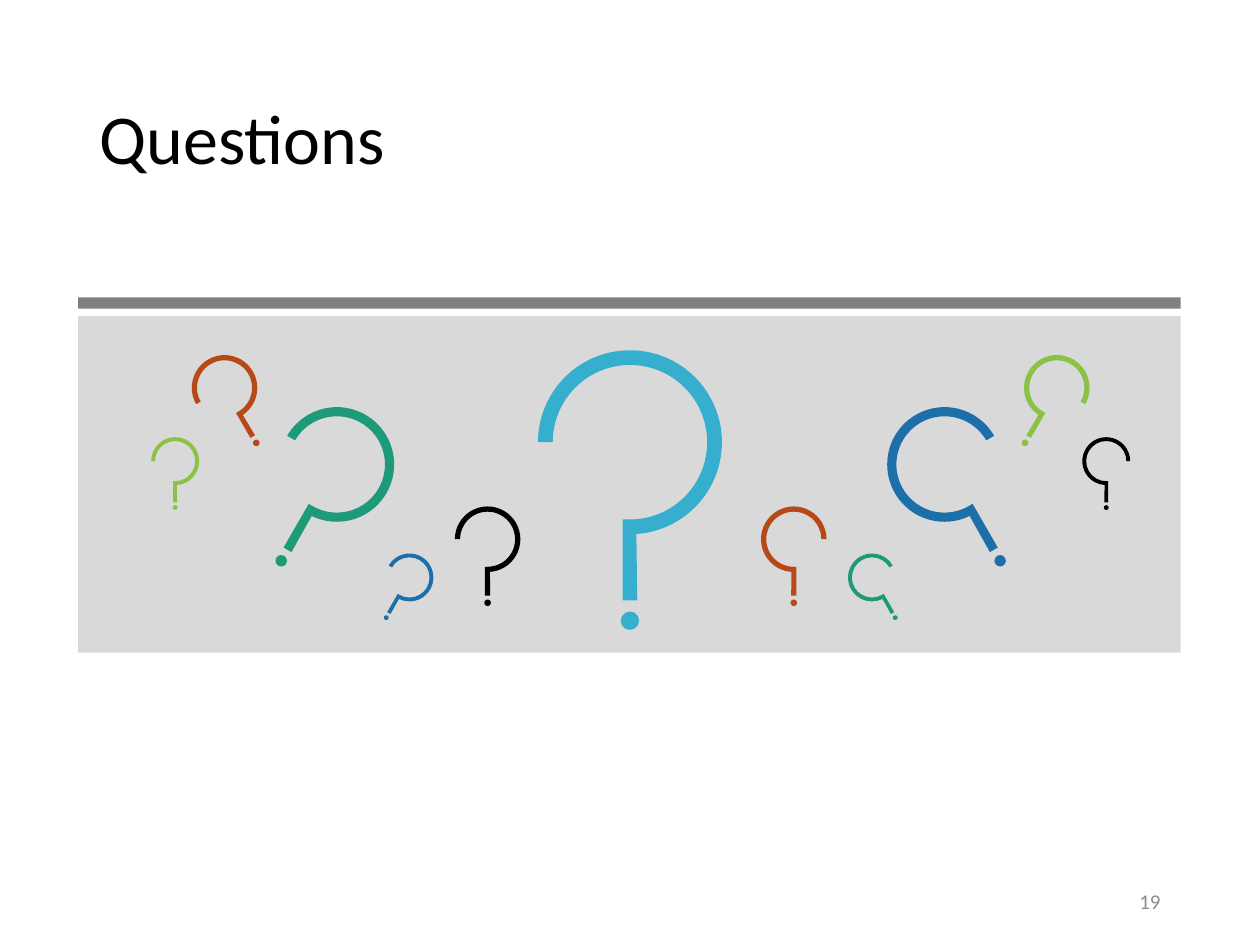
import math

import lxml.etree
import pptx
import pptx.dml.color
import pptx.enum.shapes
import pptx.enum.text
import pptx.oxml.ns
import pptx.util

Inches = pptx.util.Inches
RGBColor = pptx.dml.color.RGBColor
PP_ALIGN = pptx.enum.text.PP_ALIGN
qn = pptx.oxml.ns.qn

BLACK = RGBColor(0x00, 0x00, 0x00)
NUMBER_GRAY = RGBColor(0x8C, 0x8C, 0x8C)
PANEL_GRAY = RGBColor(0xD9, 0xD9, 0xD9)
BAR_GRAY = RGBColor(0x80, 0x80, 0x80)
CYAN = RGBColor(0x36, 0xAF, 0xCE)
RUST = RGBColor(0xB7, 0x49, 0x19)
TEAL = RGBColor(0x1D, 0x9A, 0x78)
LIME = RGBColor(0x8B, 0xC1, 0x45)
BLUE = RGBColor(0x1D, 0x6F, 0xA9)

FONT = "Calibri"
MIRROR_SUM = 10.17

# left, top, width, rotation, colour, colour of the mirrored twin
MARK_PAIRS = [
    (1.59, 2.80, 0.52, -30, RUST, LIME),
    (2.10, 3.20, 0.91, 30, TEAL, BLUE),
    (1.20, 3.47, 0.38, 0, LIME, BLACK),
    (3.61, 4.02, 0.52, 0, BLACK, RUST),
    (3.01, 4.38, 0.38, 30, BLUE, TEAL),
]


def arc(cy, radius, angles):
    segments = []
    for start, end in zip(angles, angles[1:]):
        a = math.radians(end)
        point = (0.5 + radius * math.cos(a), cy + radius * math.sin(a))
        segments.append((point, (radius, start, end - start)))
    return segments


def hook_segments():
    stem = [(0.54, 1.36), (0.46, 1.36), (0.46, 0.92), (0.5, 0.92)]
    return (
        arc(0.5, 0.5, [180, 270, 360, 446])
        + [(point, None) for point in stem]
        + arc(0.5, 0.42, [450, 360, 270, 180])
    )


def dot_segments():
    return arc(1.47, 0.05, [0, 90, 180, 270, 360])


def curve_segments(s, segments, width):
    lines = list(s._element.iter(qn("a:lnTo")))
    for line, (_, curve) in zip(lines, segments):
        if curve:
            radius, start, sweep = curve
            size = str(Inches(radius * width))
            bend = lxml.etree.SubElement(line.getparent(), qn("a:arcTo"))
            bend.set("wR", size)
            bend.set("hR", size)
            bend.set("stAng", str(start % 360 * 60000))
            bend.set("swAng", str(sweep * 60000))
            line.getparent().replace(line, bend)


def paint(s, color):
    s.shadow.inherit = False
    s.fill.solid()
    s.fill.fore_color.rgb = color
    s.line.fill.background()


def add_bar(shapes, left, top, width, height, color):
    s = shapes.add_shape(
        pptx.enum.shapes.MSO_SHAPE.RECTANGLE,
        Inches(left), Inches(top), Inches(width), Inches(height),
    )
    paint(s, color)


def add_mark(shapes, left, top, width, rotation, color, mirrored=False):
    def place(x, y):
        return Inches(left + x * width), Inches(top + y * width)

    hook, dot = hook_segments(), dot_segments()
    builder = shapes.build_freeform(*place(0, 0.5))
    builder.add_line_segments([place(*point) for point, _ in hook], close=True)
    builder.move_to(*place(0.55, 1.47))
    builder.add_line_segments([place(*point) for point, _ in dot], close=True)
    s = builder.convert_to_shape()
    curve_segments(s, hook + dot, width)
    s.rotation = rotation
    if mirrored:
        s._element.spPr.find(qn("a:xfrm")).set("flipH", "1")
    paint(s, color)


def set_text(s, text, size, color, align):
    tf = s.text_frame
    tf.text = text
    tf.word_wrap = True
    tf.auto_size = pptx.enum.text.MSO_AUTO_SIZE.NONE
    tf.vertical_anchor = pptx.enum.text.MSO_ANCHOR.MIDDLE
    p = tf.paragraphs[0]
    p.alignment = align
    r = p.runs[0]
    r.font.name = FONT
    r.font.size = pptx.util.Pt(size)
    r.font.color.rgb = color
    return p


def add_title(slide, text):
    s = slide.shapes.title
    s.left, s.top = Inches(0.69), Inches(0.4)
    s.width, s.height = Inches(8.62), Inches(1.45)
    p = set_text(s, text, 40, BLACK, PP_ALIGN.LEFT)
    p.line_spacing = 0.9


def add_page_number(slide, text):
    s = slide.shapes.add_textbox(Inches(7.06), Inches(6.95), Inches(2.25), Inches(0.4))
    set_text(s, text, 12, NUMBER_GRAY, PP_ALIGN.RIGHT)


def add_banner(slide):
    shapes = slide.shapes.add_group_shape().shapes
    add_bar(shapes, 0.62, 2.51, 8.75, 2.67, PANEL_GRAY)
    add_mark(shapes, 4.27, 2.78, 1.46, 0, CYAN)
    for left, top, width, rotation, color, twin_color in MARK_PAIRS:
        add_mark(shapes, left, top, width, rotation, color)
        add_mark(shapes, MIRROR_SUM - left - width, top, width, -rotation, twin_color, True)
    add_bar(shapes, 0.62, 2.36, 8.75, 0.09, BAR_GRAY)


def main():
    prs = pptx.Presentation()
    prs.slide_width, prs.slide_height = Inches(10), Inches(7.5)
    slide = prs.slides.add_slide(prs.slide_layouts[5])
    add_title(slide, "Questions")
    add_page_number(slide, "19")
    add_banner(slide)
    prs.save("out.pptx")


if __name__ == "__main__":
    main()
